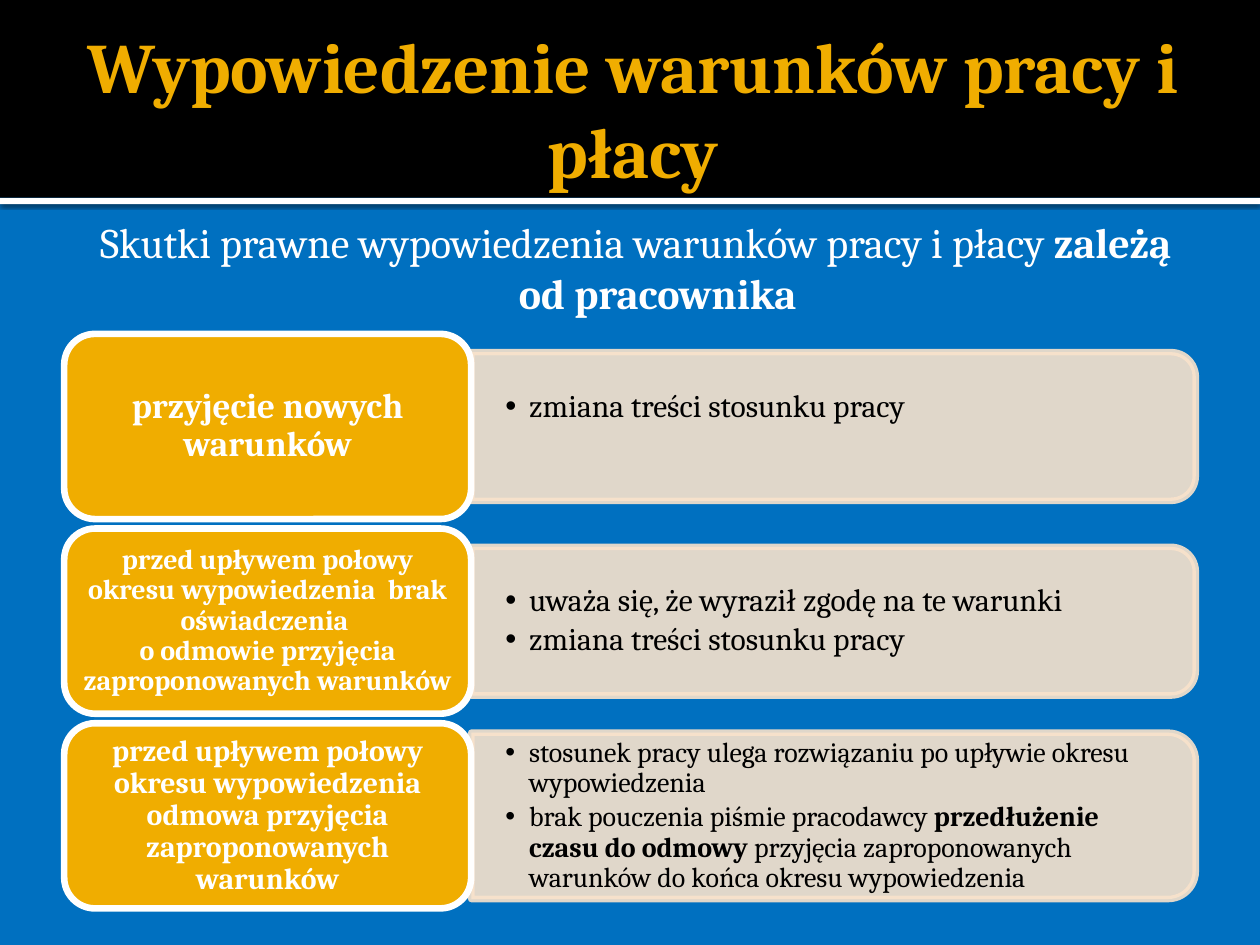
"""Build a slide on the legal effects of a notice changing work and pay terms."""
from dataclasses import dataclass
from lxml.etree import SubElement
from pptx import Presentation
from pptx.dml.color import RGBColor as Rgb
from pptx.enum.shapes import MSO_SHAPE as Kind
from pptx.enum.text import MSO_ANCHOR as Anchor, MSO_AUTO_SIZE as Fit, PP_ALIGN as Align
from pptx.oxml.ns import qn
from pptx.util import Inches, Pt


@dataclass(frozen=True)
class Theme:
    font: str = "Cambria"
    blue: str = "0070C0"
    gold: str = "F0AD00"
    sand: str = "F9E3CC"
    white: str = "FFFFFF"
    black: str = "000000"
    title: float = 40.5
    lead: float = 24
    edge: float = 3.78


@dataclass(frozen=True)
class Row:
    card: str
    size: float
    points: list
    note: float = 18
    high: float = 1.18
    foot: float = 0.14


LOOK = Theme()
TOP, STEP = 2.65, 1.545
LEFT, WIDE, TALL = 0.51, 3.23, 1.47
SPAN = 5.75
ROWS = [
    Row("przyjęcie nowych warunków", 20, [["zmiana treści stosunku pracy"]], foot=0.44),
    Row("przed upływem połowy okresu wypowiedzenia  brak oświadczenia \n"
        "o odmowie przyjęcia zaproponowanych warunków", 16,
        [["uważa się, że wyraził zgodę na te warunki"], ["zmiana treści stosunku pracy"]]),
    Row("przed upływem połowy okresu wypowiedzenia odmowa przyjęcia zaproponowanych warunków", 17,
        [["stosunek pracy ulega rozwiązaniu po upływie okresu wypowiedzenia"],
         ["brak pouczenia piśmie pracodawcy ", "przedłużenie czasu do odmowy ",
          "przyjęcia zaproponowanych warunków do końca okresu wypowiedzenia"]],
        note=16, high=1.32),
]


def place(shape, x: float, y: float, w: float, h: float) -> None:
    """Set the position and size of a shape in inches."""
    shape.left, shape.top, shape.width, shape.height = map(Inches, (x, y, w, h))


def style(para, size: float, color: str, bold: bool | None = None) -> None:
    """Set the font of a paragraph."""
    font = para.font
    font.name, font.size, font.bold = LOOK.font, Pt(size), bold
    font.color.rgb = Rgb.from_string(color)


def setup(frame, pads: tuple, anchor=Anchor.MIDDLE) -> None:
    """Set wrapping, anchor and margins of a text frame."""
    frame.word_wrap, frame.auto_size, frame.vertical_anchor = True, Fit.NONE, anchor
    (frame.margin_left, frame.margin_top,
     frame.margin_right, frame.margin_bottom) = map(Inches, pads)


def indent(para, left: float, first: float, mark: str = "") -> None:
    """Set the indents and the bullet of a paragraph."""
    props = para._p.get_or_add_pPr()
    props.set("marL", str(Inches(left)))
    props.set("indent", str(Inches(first)))
    if mark:
        SubElement(props, qn("a:buFont"), typeface="Arial")
        SubElement(props, qn("a:buChar"), char=mark)
    else:
        SubElement(props, qn("a:buNone"))


def write(para, parts: list) -> None:
    """Add runs, every second one bold."""
    for num, part in enumerate(parts):
        run = para.add_run()
        run.text = part
        if num % 2:
            run.font.bold = True


def block(slide, kind, box: tuple, fill: str, line: str = ""):
    """Draw a filled preset shape, outlined when a line colour is given."""
    shape = slide.shapes.add_shape(kind, *map(Inches, box))
    shape.shadow.inherit = False
    shape.fill.solid()
    shape.fill.fore_color.rgb = Rgb.from_string(fill)
    if line:
        shape.line.color.rgb = Rgb.from_string(line)
        shape.line.width = Pt(LOOK.edge)
    else:
        shape.line.fill.background()
    return shape


def shade(shape) -> None:
    """Give a shape a soft shadow below."""
    drop = SubElement(shape._element.spPr.find(qn("a:effectLst")), qn("a:outerShdw"),
                      blurRad=str(Pt(2.5)), dist=str(Pt(0.8)), dir="5400000", rotWithShape="0")
    tint = SubElement(drop, qn("a:srgbClr"), val=LOOK.black)
    SubElement(tint, qn("a:alpha"), val="60000")


def header(slide) -> None:
    """Draw the title band and fill both placeholders."""
    title, body = slide.shapes.title, slide.placeholders[1]
    rule = block(slide, Kind.RECTANGLE, (0, 1.57, 10, 0.05), LOOK.white)
    shade(rule)
    band = block(slide, Kind.RECTANGLE, (0, 0, 10, 1.57), LOOK.black)
    for shape in (rule, band):
        title._element.addprevious(shape._element)

    place(title, 0.5, 0.17, 9, 1.37)
    setup(title.text_frame, (0.1, 0.05, 0.05, 0.05))
    head = title.text_frame.paragraphs[0]
    head.text, head.alignment = "Wypowiedzenie warunków pracy i płacy", Align.CENTER
    style(head, LOOK.title, LOOK.gold, True)

    place(body, 0.5, 1.62, 9, 5.88)
    setup(body.text_frame, (0.06, 0.1, 0.1, 0.05), Anchor.TOP)
    lead = body.text_frame.paragraphs[0]
    lead.alignment, lead.space_before = Align.CENTER, Pt(0)
    indent(lead, 0.48, -0.35)
    write(lead, ["Skutki prawne wypowiedzenia warunków pracy i płacy ", "zależą od pracownika"])
    style(lead, LOOK.lead, LOOK.white)


def draw(slide, row: Row, top: float) -> None:
    """Draw one row: a bar with its points and the card before it."""
    start, mid = LEFT + WIDE, top + TALL / 2
    bar = block(slide, Kind.ROUND_2_SAME_RECTANGLE,
                (start + (SPAN - row.high) / 2, mid - SPAN / 2, row.high, SPAN),
                LOOK.sand, LOOK.sand)
    bar.rotation = 90
    for tint in bar._element.spPr.iter(qn("a:srgbClr")):
        SubElement(tint, qn("a:alpha"), val="90000")

    tall = row.high - 0.12
    box = slide.shapes.add_textbox(*map(Inches, (start, mid - tall / 2, 5.69, tall)))
    frame = box.text_frame
    setup(frame, (0.27, 0.14, 0.27, row.foot))
    for num, parts in enumerate(row.points):
        para = frame.add_paragraph() if num else frame.paragraphs[0]
        para.line_spacing, para.space_after = 0.9, Pt(0.15 * row.note)
        indent(para, 0.19, -0.19, "•")
        write(para, parts)
        style(para, row.note, LOOK.black)

    card = block(slide, Kind.ROUNDED_RECTANGLE, (LEFT, top, WIDE, TALL), LOOK.gold, LOOK.white)
    setup(card.text_frame, (0.07, 0.04, 0.07, 0.04))
    para = card.text_frame.paragraphs[0]
    para.text, para.alignment, para.line_spacing = row.card, Align.CENTER, 0.9
    style(para, row.size, LOOK.white, True)


def main() -> None:
    """Build and save the slide."""
    deck = Presentation()
    deck.slide_width, deck.slide_height = Inches(10), Inches(7.5)
    slide = deck.slides.add_slide(deck.slide_layouts[1])
    back = slide.background.fill
    back.solid()
    back.fore_color.rgb = Rgb.from_string(LOOK.blue)
    header(slide)
    for num, row in enumerate(ROWS):
        draw(slide, row, TOP + num * STEP)
    deck.save("out.pptx")


if __name__ == "__main__":
    main()
